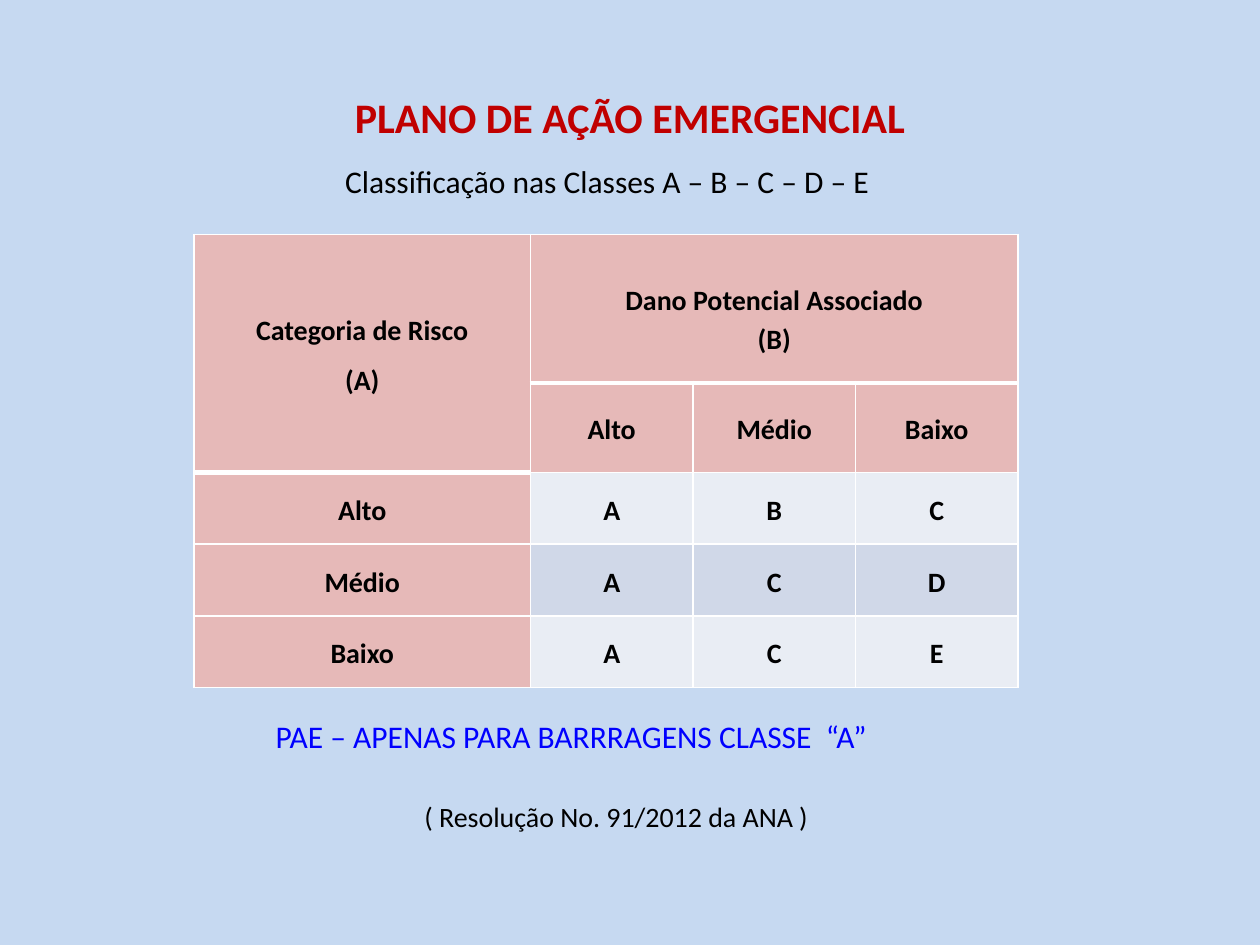
from lxml import etree
from pptx import Presentation
from pptx.dml.color import RGBColor
from pptx.enum.text import MSO_ANCHOR, MSO_AUTO_SIZE, PP_ALIGN
from pptx.oxml.ns import qn
from pptx.util import Inches, Pt

CENTER = PP_ALIGN.CENTER
MIDDLE = MSO_ANCHOR.MIDDLE
TOP = MSO_ANCHOR.TOP
GROW = MSO_AUTO_SIZE.SHAPE_TO_FIT_TEXT
FONT = "Calibri"
TITLE_ONLY = 5
COLORS = {
    "background": "C6D9F1",
    "title": "C00000",
    "text": "000000",
    "note": "0000FF",
    "header": "E6B9B8",
    "light": "E9EDF4",
    "dark": "D0D8E8",
    "border": "FFFFFF",
}
COL_WIDTHS = [2.67, 1.29, 1.29, 1.29]
ROW_HEIGHTS = [1.18, 0.57, 0.57, 0.57, 0.57]
ROWS = [
    ["Categoria de Risco\n(A)", "Dano Potencial Associado\v(B)", "", ""],
    ["", "Alto", "Médio", "Baixo"],
    ["Alto", "A", "B", "C"],
    ["Médio", "A", "C", "D"],
    ["Baixo", "A", "C", "E"],
]
THICK_BELOW = {(1, 0), (0, 1), (0, 2), (0, 3)}


def rgb(name):
    return RGBColor.from_string(COLORS[name])


def add_run(p, text, size, color="text", bold=False):
    r = p.add_run()
    r.text = text
    r.font.name = FONT
    r.font.size = Pt(size)
    r.font.bold = bold
    r.font.color.rgb = rgb(color)


def add_title(s, text):
    sp = s.shapes.title
    sp.left, sp.top = Inches(0.5), Inches(0.3)
    sp.width, sp.height = Inches(9), Inches(1.25)
    tf = sp.text_frame
    tf.vertical_anchor = MIDDLE
    p = tf.paragraphs[0]
    p.alignment = CENTER
    add_run(p, text, 24, "title", True)


def add_label(s, text, left, top, width, height, size, color="text"):
    sp = s.shapes.add_textbox(Inches(left), Inches(top), Inches(width), Inches(height))
    tf = sp.text_frame
    tf.word_wrap = True
    tf.auto_size = GROW
    add_run(tf.paragraphs[0], text, size, color)


def set_borders(cell, top, bottom):
    tcPr = cell._tc.get_or_add_tcPr()
    for side, width in (("L", 1), ("R", 1), ("T", top), ("B", bottom)):
        ln = etree.SubElement(tcPr, qn(f"a:ln{side}"), w=str(Pt(width)))
        fill = etree.SubElement(ln, qn("a:solidFill"))
        etree.SubElement(fill, qn("a:srgbClr"), val=COLORS["border"])


def write_cell(cell, text):
    tf = cell.text_frame
    for i, block in enumerate(text.split("\n")):
        p = tf.add_paragraph() if i else tf.paragraphs[0]
        p.alignment = CENTER
        p.line_spacing = 1.15
        p.space_before = p.space_after = Pt(3)
        for j, line in enumerate(block.split("\v")):
            if j:
                p.add_line_break()
            add_run(p, line, 16, bold=True)


def cell_color(row, col):
    if row < 2 or col == 0:
        return "header"
    return "dark" if row % 2 else "light"


def add_risk_table(s):
    frame = s.shapes.add_table(
        len(ROWS), len(COL_WIDTHS), Inches(1.54), Inches(1.86),
        Inches(sum(COL_WIDTHS)), Inches(sum(ROW_HEIGHTS)))
    table = frame.table
    for column, width in zip(table.columns, COL_WIDTHS):
        column.width = Inches(width)
    for row, height in zip(table.rows, ROW_HEIGHTS):
        row.height = Inches(height)
    table.cell(0, 0).merge(table.cell(1, 0))
    table.cell(0, 1).merge(table.cell(0, 3))
    for i, texts in enumerate(ROWS):
        for j, text in enumerate(texts):
            cell = table.cell(i, j)
            set_borders(cell,
                        3 if (i - 1, j) in THICK_BELOW else 1,
                        3 if (i, j) in THICK_BELOW or (i, j) == (0, 0) else 1)
            cell.fill.solid()
            cell.fill.fore_color.rgb = rgb(cell_color(i, j))
            cell.margin_left = cell.margin_right = Inches(0.07)
            cell.margin_top = cell.margin_bottom = 0
            cell.vertical_anchor = MIDDLE
            if text:
                write_cell(cell, text)
    damage = table.cell(0, 1)
    damage.vertical_anchor = TOP
    damage.margin_top = Inches(0.35)


def main():
    prs = Presentation()
    prs.slide_width, prs.slide_height = Inches(10), Inches(7.5)
    s = prs.slides.add_slide(prs.slide_layouts[TITLE_ONLY])
    s.background.fill.solid()
    s.background.fill.fore_color.rgb = rgb("background")
    add_title(s, "PLANO DE AÇÃO EMERGENCIAL")
    add_risk_table(s)
    add_label(s, "( Resolução No. 91/2012 da ANA )", 3.27, 6.3, 3.54, 0.37, 16)
    add_label(s, "Classificação nas Classes A – B – C – D – E", 2.64, 1.24, 4.49, 0.4, 18)
    add_label(s, "PAE – APENAS PARA BARRRAGENS CLASSE  “A”", 2.09, 5.64, 5.04, 0.4, 18, "note")
    prs.save("out.pptx")


if __name__ == "__main__":
    main()
